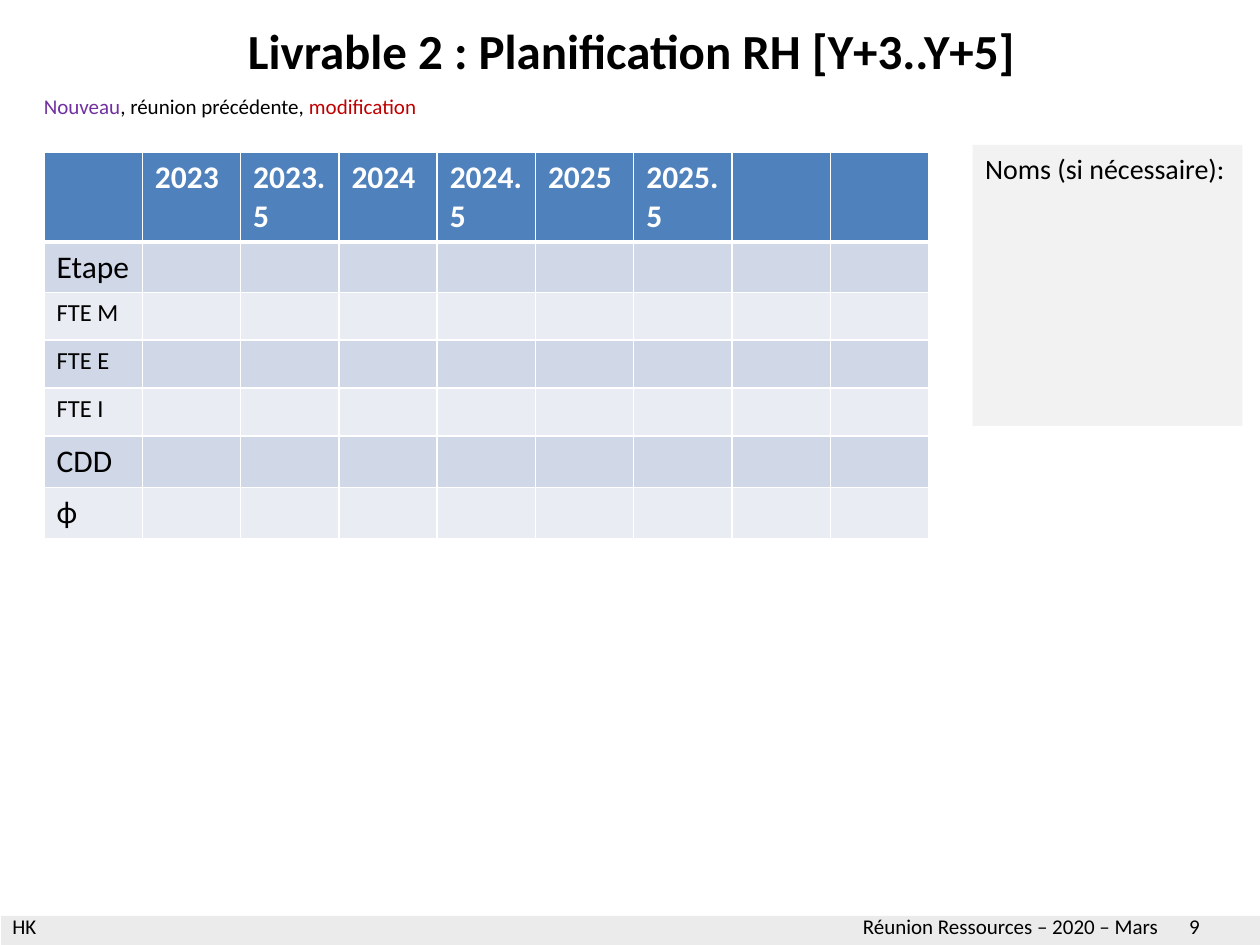
from lxml.etree import SubElement
from pptx import Presentation
from pptx.dml.color import RGBColor
from pptx.enum.shapes import MSO_SHAPE
from pptx.enum.text import MSO_ANCHOR, PP_ALIGN
from pptx.oxml.ns import qn
from pptx.util import Inches, Pt

TITLE = "Livrable 2 : Planification RH [Y+3..Y+5]"
LEGEND = [("Nouveau", "7030A0"), (", réunion précédente, ", "000000"),
          ("modification", "C00000")]
NAMES = "Noms (si nécessaire):"
FOOTER = [  # text, left, width
    ("Réunion Ressources – 2020 – Mars", 6.75, 2.95),
    ("9", 9.34, 0.66),
    ("HK", 0, 1.23),
]
HEAD = ["", "2023", "2023.5", "2024", "2024.5", "2025", "2025.5", "", ""]
ROWS = [  # label, text size, height
    ("Etape", 18, 0.4),
    ("FTE M", 14, 0.38),
    ("FTE E", 14, 0.38),
    ("FTE I", 14, 0.38),
    ("CDD", 18, 0.41),
    ("ϕ", 18, 0.41),
]
HEAD_H = 0.71
COL_W = 0.78
BANDS = ["D0D8E7", "E9ECF3"]


def rgb(code):
    return RGBColor.from_string(code)


def write(frame, text, size=12, color="000000", bold=False,
          align=PP_ALIGN.LEFT, anchor=MSO_ANCHOR.TOP, wrap=True):
    """Fill a frame with a string or a list of (text, colour) runs."""
    frame.word_wrap = wrap
    frame.vertical_anchor = anchor
    para = frame.paragraphs[0]
    para.alignment = align
    for part, tint in [(text, color)] if isinstance(text, str) else text:
        run = para.add_run()
        run.text = part
        font = run.font
        font.name, font.size, font.bold = "Calibri", Pt(size), bold
        font.color.rgb = rgb(tint)


def add_text(slide, box, text, **style):
    shape = slide.shapes.add_textbox(*map(Inches, box))
    write(shape.text_frame, text, **style)


def add_rect(slide, box, color):
    shape = slide.shapes.add_shape(MSO_SHAPE.RECTANGLE, *map(Inches, box))
    shape.shadow.inherit = False
    shape.fill.solid()
    shape.fill.fore_color.rgb = rgb(color)
    shape.line.fill.background()
    return shape


def set_edges(cell, top, bottom):
    """Draw white borders, with the top and bottom widths in points."""
    props = cell._tc.get_or_add_tcPr()
    widths = {"lnL": 0.96, "lnR": 0.96, "lnT": top, "lnB": bottom}
    for i, (tag, width) in enumerate(widths.items()):
        line = SubElement(props, qn(f"a:{tag}"), w=str(Pt(width)))
        fill = SubElement(line, qn("a:solidFill"))
        SubElement(fill, qn("a:srgbClr"), val="FFFFFF")
        props.insert(i, line)


def fill_cell(cell, text, size, color, bold, back, top=0.96, bottom=0.96):
    cell.fill.solid()
    cell.fill.fore_color.rgb = rgb(back)
    set_edges(cell, top, bottom)
    if text:
        write(cell.text_frame, text, size=size, color=color, bold=bold)
    else:  # an empty cell still needs a size to keep its row height
        para = cell.text_frame.paragraphs[0]
        SubElement(para._p, qn("a:endParaRPr"), sz=str(size * 100))


def add_plan(slide):
    heights = [HEAD_H] + [height for _, _, height in ROWS]
    box = (0.35, 1.21, COL_W * len(HEAD), sum(heights))
    table = slide.shapes.add_table(len(heights), len(HEAD),
                                   *map(Inches, box)).table
    for col in table.columns:
        col.width = Inches(COL_W)
    for row, height in zip(table.rows, heights):
        row.height = Inches(height)
    for c, year in enumerate(HEAD):
        fill_cell(table.cell(0, c), year, 18, "FFFFFF", True, "4F81BD",
                  bottom=3)
        for r, (label, size, _) in enumerate(ROWS):
            fill_cell(table.cell(r + 1, c), "" if c else label, size,
                      "000000", False, BANDS[r % 2], top=0.96 if r else 3)


def main():
    deck = Presentation()
    deck.slide_width, deck.slide_height = Inches(10), Inches(7.5)
    slide = deck.slides.add_slide(deck.slide_layouts[6])

    bar = add_rect(slide, (0.01, 7.27, 10, 0.23), "D9D9D9")
    tint = bar.fill._xPr.find(f".//{qn('a:srgbClr')}")
    SubElement(tint, qn("a:alpha"), val="50000")
    for text, left, width in FOOTER:
        add_text(slide, (left, 7.2, width, 0.3), text)

    add_plan(slide)
    add_text(slide, (0.51, 0.05, 9, 0.69), TITLE, size=28, bold=True,
             align=PP_ALIGN.CENTER, anchor=MSO_ANCHOR.MIDDLE)
    names = add_rect(slide, (7.72, 1.15, 2.14, 2.23), "F2F2F2")
    write(names.text_frame, NAMES, size=16)
    add_text(slide, (0.25, 0.69, 3.16, 0.3), LEGEND, wrap=False)
    deck.save("out.pptx")


if __name__ == "__main__":
    main()
